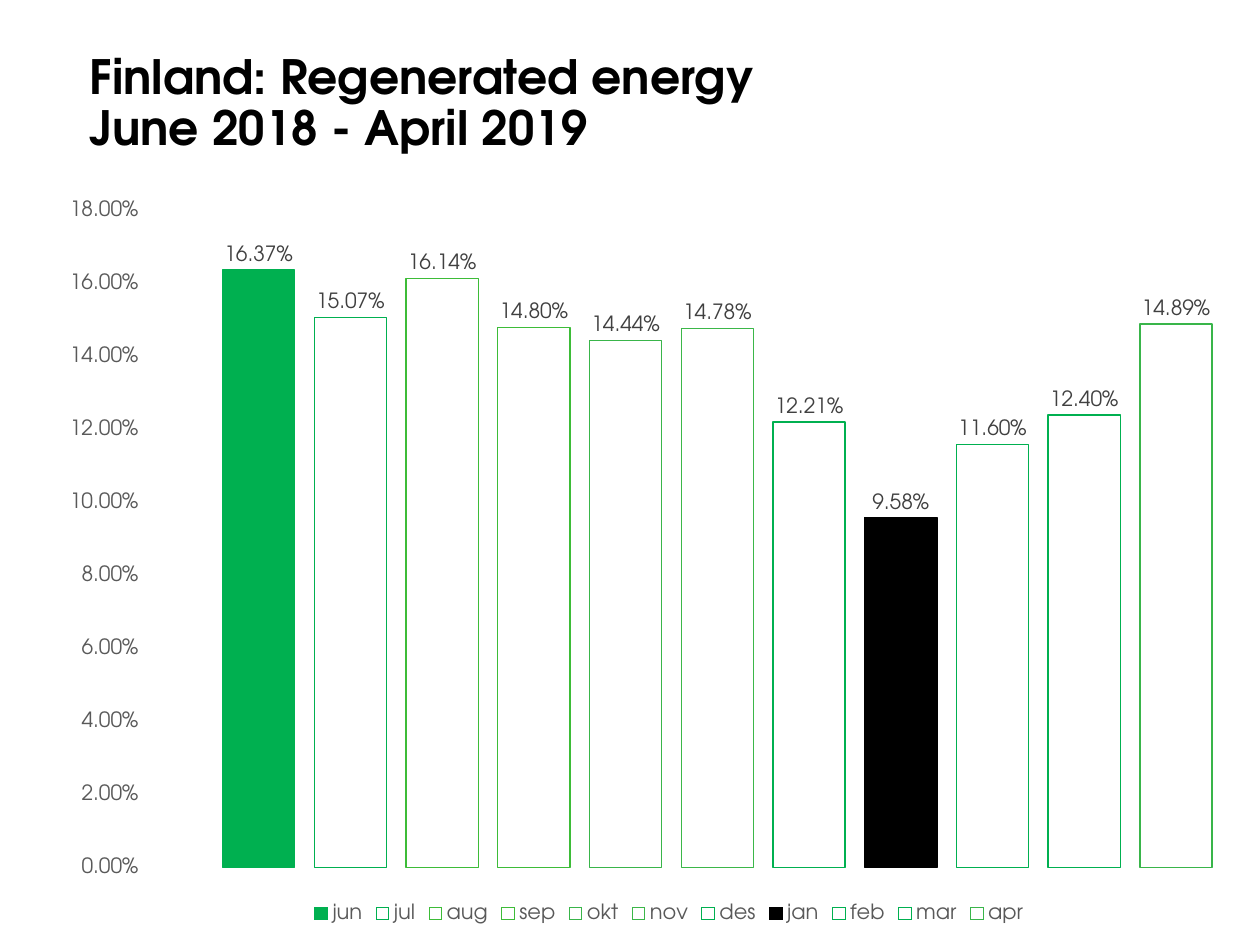
from lxml import etree
from pptx import Presentation
from pptx.chart.data import CategoryChartData
from pptx.dml.color import RGBColor
from pptx.enum.chart import (XL_CHART_TYPE, XL_LABEL_POSITION,
                             XL_LEGEND_POSITION, XL_TICK_MARK)
from pptx.enum.text import MSO_ANCHOR
from pptx.oxml.ns import qn
from pptx.util import Inches, Pt

COLUMNS = XL_CHART_TYPE.COLUMN_CLUSTERED
LABEL_ABOVE = XL_LABEL_POSITION.OUTSIDE_END
LEGEND_BELOW = XL_LEGEND_POSITION.BOTTOM
NO_TICK = XL_TICK_MARK.NONE
ANCHOR_BOTTOM = MSO_ANCHOR.BOTTOM

FONT = "TeX Gyre Adventor"
PERCENT = "0.00%"
COLORS = {
    "black": "000000",
    "white": "FFFFFF",
    "green": "00B050",
    "lime": "3DBC38",
    "leaf": "39B54A",
    "fern": "3BB749",
    "axis": "595959",
    "label": "404040",
}
MONTHS = [
    ("jun", 0.1637, "green", "green"),
    ("jul", 0.1507, "white", "green"),
    ("aug", 0.1614, "white", "lime"),
    ("sep", 0.1480, None, "lime"),
    ("okt", 0.1444, "white", "leaf"),
    ("nov", 0.1478, "white", "fern"),
    ("des", 0.1221, None, "green"),
    ("jan", 0.0958, "black", "black"),
    ("feb", 0.1160, None, "green"),
    ("mar", 0.1240, None, "green"),
    ("apr", 0.1489, None, "leaf"),
]
PLOT_AREA = {"x": 0.087, "y": 0.036, "w": 0.902, "h": 0.882}


def color(name):
    """Return the named colour."""
    return RGBColor.from_string(COLORS[name])


def style_font(font, size, name, bold=False):
    """Apply the slide typeface with a size and colour."""
    font.name = FONT
    font.size = Pt(size)
    font.bold = bold
    font.color.rgb = color(name)


def set_plot_layout(chart):
    """Fix the inner plot area as fractions of the chart."""
    plot_area = chart._chartSpace.find(".//" + qn("c:plotArea"))
    for layout in plot_area.findall(qn("c:layout")):
        plot_area.remove(layout)
    layout = etree.Element(qn("c:layout"))
    manual = etree.SubElement(layout, qn("c:manualLayout"))
    settings = {"layoutTarget": "inner", "xMode": "edge", "yMode": "edge", **PLOT_AREA}
    for tag, value in settings.items():
        etree.SubElement(manual, qn("c:" + tag)).set("val", str(value))
    plot_area.insert(0, layout)


def style_series(series, fill, line):
    """Colour one month's column and label its value."""
    if fill:
        series.format.fill.solid()
        series.format.fill.fore_color.rgb = color(fill)
    else:
        series.format.fill.background()
    series.format.line.color.rgb = color(line)
    series.format.line.width = Pt(0.75)
    series.invert_if_negative = False
    labels = series.data_labels
    labels.show_value = True
    labels.position = LABEL_ABOVE
    labels.number_format = PERCENT
    labels.number_format_is_linked = False
    style_font(labels.font, 12, "label")


def style_axes(chart):
    """Hide the category axis and show plain percentages."""
    chart.category_axis.visible = False
    axis = chart.value_axis
    axis.minimum_scale = 0
    axis.maximum_scale = 0.18
    axis.major_unit = 0.02
    axis.has_major_gridlines = False
    axis.major_tick_mark = NO_TICK
    axis.minor_tick_mark = NO_TICK
    axis.format.line.fill.background()
    axis.tick_labels.number_format = PERCENT
    axis.tick_labels.number_format_is_linked = False
    style_font(axis.tick_labels.font, 12, "axis")


def add_title(page, left, top, width, height):
    """Place the two-line heading on the bottom of its box."""
    frame = page.shapes.add_textbox(left, top, width, height).text_frame
    frame.word_wrap = True
    frame.vertical_anchor = ANCHOR_BOTTOM
    frame.margin_left = frame.margin_right = 0
    frame.margin_top = frame.margin_bottom = 0
    para = frame.paragraphs[0]
    para.text = "Finland: Regenerated energy \vJune 2018 - April 2019"
    para.line_spacing = 0.9
    for span in para.runs:
        style_font(span.font, 27, "black", bold=True)


def add_energy_chart(page, left, top, width, height):
    """Place the monthly column chart with its legend."""
    data = CategoryChartData(number_format=PERCENT)
    data.categories = ["1"]
    for month, share, _, _ in MONTHS:
        data.add_series(month, [share])
    chart = page.shapes.add_chart(COLUMNS, left, top, width, height, data).chart
    style_font(chart.font, 10, "black")
    chart.has_title = False
    chart.has_legend = True
    chart.legend.position = LEGEND_BELOW
    chart.legend.include_in_layout = False
    style_font(chart.legend.font, 12, "axis")
    plot = chart.plots[0]
    plot.vary_by_categories = False
    plot.gap_width = 219
    plot.overlap = -27
    for series, (_, _, fill, line) in zip(plot.series, MONTHS):
        style_series(series, fill, line)
    style_axes(chart)
    set_plot_layout(chart)


def main():
    """Build and save the slide."""
    deck = Presentation()
    deck.slide_width = Inches(10)
    deck.slide_height = Inches(7.5)
    page = deck.slides.add_slide(deck.slide_layouts[6])
    add_title(page, Inches(0.71), Inches(0.37), Inches(7.59), Inches(0.87))
    add_energy_chart(page, Inches(0.26), Inches(1.46), Inches(10.1), Inches(5.91))
    deck.save("out.pptx")


if __name__ == "__main__":
    main()
